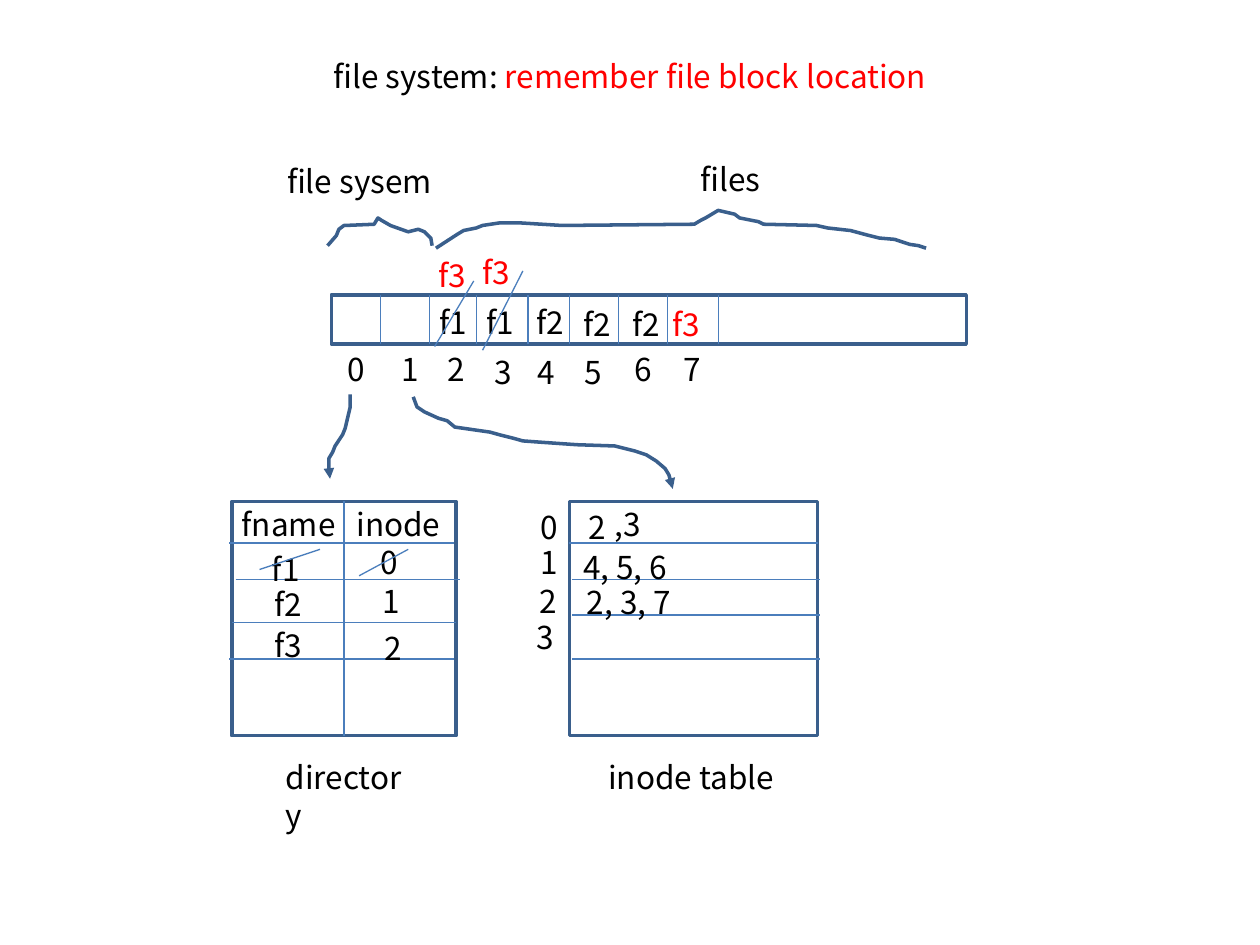
from pptx import Presentation
from pptx.dml.color import RGBColor
from pptx.enum.shapes import MSO_CONNECTOR, MSO_SHAPE
from pptx.enum.text import MSO_ANCHOR, MSO_AUTO_SIZE, PP_ALIGN
from pptx.oxml.ns import qn
from pptx.util import Inches, Pt
from lxml import etree

RECT = MSO_SHAPE.RECTANGLE
LINE = MSO_CONNECTOR.STRAIGHT
MIDDLE = MSO_ANCHOR.MIDDLE
GROW = MSO_AUTO_SIZE.SHAPE_TO_FIT_TEXT
FIXED = MSO_AUTO_SIZE.NONE
CENTER = PP_ALIGN.CENTER
FONT = "Noto Sans CJK KR"
COLORS = {"text": "000000", "red": "FF0000", "edge": "3A5F8C", "rule": "4B7EBC"}
DIGIT, NAME = 0.31, 0.47

BRACE_FS = [(0, 0.22), (0.07, 0.14), (0.09, 0.09), (0.13, 0.06), (0.37, 0.05),
            (0.4, 0), (0.43, 0.02), (0.5, 0.06), (0.64, 0.11), (0.72, 0.09),
            (0.77, 0.11), (0.82, 0.16), (0.83, 0.22)]
BRACE_FILES = [(0, 0.3), (0.17, 0.19), (0.22, 0.16), (0.32, 0.14), (0.37, 0.12),
               (0.5, 0.1), (0.68, 0.1), (1, 0.12), (2.05, 0.11), (2.1, 0.08),
               (2.14, 0.06), (2.24, 0), (2.37, 0.03), (2.41, 0.06), (2.56, 0.09),
               (2.6, 0.11), (3.02, 0.12), (3.11, 0.14), (3.29, 0.16), (3.44, 0.2),
               (3.52, 0.22), (3.64, 0.23), (3.76, 0.27), (3.83, 0.28), (3.89, 0.3)]
TO_DIR = [(0.17, 0), (0.17, 0.1), (0.13, 0.27), (0.11, 0.32), (0.05, 0.41),
          (0.03, 0.46), (0, 0.51), (0, 0.58), (0.01, 0.67)]
TO_TABLE = [(0, 0), (0.03, 0.08), (0.09, 0.12), (0.2, 0.17), (0.27, 0.19),
            (0.33, 0.24), (0.61, 0.28), (0.68, 0.3), (0.8, 0.33), (0.87, 0.35),
            (1.01, 0.36), (1.3, 0.38), (1.6, 0.39), (1.76, 0.43), (1.85, 0.46),
            (1.93, 0.51), (2, 0.57), (2.03, 0.62), (2.06, 0.73)]


def tint(name):
    return RGBColor.from_string(COLORS[name])


def text(slide, x, y, w, *runs, h=0.4):
    box = slide.shapes.add_textbox(Inches(x), Inches(y), Inches(w), Inches(h))
    frame = box.text_frame
    frame.word_wrap = True
    frame.auto_size = GROW
    for words, color in runs:
        run = frame.paragraphs[0].add_run()
        run.text = words
        run.font.size = Pt(18)
        run.font.name = FONT
        run.font.color.rgb = tint(color)
        fonts = run.font._element
        for tag in ("a:ea", "a:cs"):
            etree.SubElement(fonts, qn(tag)).set("typeface", FONT)
    return box


def labels(slide, left, top, items, color="text"):
    for words, x, y, w in items:
        text(slide, left + x, top + y, w, (words, color))


def rule(slide, x1, y1, x2, y2):
    line = slide.shapes.add_connector(LINE, Inches(x1), Inches(y1), Inches(x2), Inches(y2))
    line.line.color.rgb = tint("rule")
    line.line.width = Pt(0.75)
    etree.SubElement(line._element.spPr, qn("a:effectLst"))


def outline(shape):
    shape.shadow.inherit = False
    shape.fill.background()
    shape.line.color.rgb = tint("edge")
    shape.line.width = Pt(2)


def frame(slide, box):
    outline(slide.shapes.add_shape(RECT, *map(Inches, box)))


def curve(slide, left, top, points, arrow=False):
    spots = [(Inches(left + x), Inches(top + y)) for x, y in points]
    pen = slide.shapes.build_freeform(*spots[0])
    pen.add_line_segments(spots[1:], close=False)
    shape = pen.convert_to_shape()
    outline(shape)
    edge = shape._element.spPr.find(qn("a:ln"))
    etree.SubElement(edge, qn("a:round"))
    if arrow:
        etree.SubElement(edge, qn("a:tailEnd")).set("type", "triangle")


def title(slide, box):
    left, top, width, height = box
    head = text(slide, left, top, width, ("file system: ", "text"),
                ("remember file block location", "red"), h=height)
    head.text_frame.auto_size = FIXED
    head.text_frame.vertical_anchor = MIDDLE
    head.text_frame.paragraphs[0].alignment = CENTER


def disk(slide, box):
    left, top, width, height = box
    frame(slide, box)
    for x in (0.39, 0.78, 1.15, 1.56, 1.89, 2.28, 2.67, 3.07):
        rule(slide, left + x, top, left + x, top + height)
    spots = [(0.03, 0.39), (0.46, 0.39), (0.82, 0.39), (1.2, 0.41),
             (1.54, 0.41), (1.91, 0.41), (2.31, 0.39), (2.7, 0.39)]
    labels(slide, left, top, [(str(i), x, y, DIGIT) for i, (x, y) in enumerate(spots)])
    labels(slide, left, top, [
        ("f1", 0.76, 0.02, NAME), ("f1", 1.13, 0.02, NAME), ("f2", 1.53, 0.02, NAME),
        ("f2", 1.9, 0.03, NAME), ("f2", 2.29, 0.03, NAME),
        ("file sysem", -0.45, -1.1, 1.56), ("files", 2.83, -1.12, 1.56)])
    labels(slide, left, top, [
        ("f3", 0.75, -0.36, NAME), ("f3", 1.1, -0.38, NAME), ("f3", 2.61, 0.03, NAME)], "red")
    rule(slide, left + 1.13, top - 0.11, left + 0.82, top + 0.41)
    rule(slide, left + 1.52, top - 0.19, left + 1.2, top + 0.44)
    curve(slide, left - 0.03, top - 0.61, BRACE_FS)
    curve(slide, left + 0.83, top - 0.67, BRACE_FILES)


def grid(slide, box, rows):
    left, top, width, height = box
    frame(slide, box)
    for x, y in rows:
        rule(slide, left + x, top + y, left + x + width, top + y)


def folder(slide, box):
    left, top, width, height = box
    grid(slide, box, [(-0.02, 0.33), (0.03, 0.62), (0, 0.96), (-0.02, 1.25)])
    rule(slide, left + 0.89, top, left + 0.89, top + height)
    labels(slide, left, top, [
        ("fname", -0.02, -0.02, 1.02), ("inode", 0.89, -0.02, 1.02),
        ("f1", 0.22, 0.34, NAME), ("0", 1.08, 0.28, DIGIT),
        ("f2", 0.24, 0.61, NAME), ("1", 1.1, 0.59, DIGIT),
        ("f3", 0.24, 0.94, NAME), ("2", 1.11, 0.96, DIGIT),
        ("directory", 0.33, 1.99, 1.23)])
    rule(slide, left + 0.7, top + 0.38, left + 0.22, top + 0.54)
    rule(slide, left + 1.4, top + 0.38, left + 1.01, top + 0.59)
    curve(slide, left + 0.77, top - 0.85, TO_DIR, True)


def inodes(slide, box):
    left, top, width, height = box
    grid(slide, box, [(0, 0.33), (0.02, 0.62), (0.02, 0.9), (0.02, 1.25)])
    labels(slide, left, top, [
        ("0", -0.33, 0, DIGIT), ("1", -0.33, 0.28, DIGIT),
        ("2", -0.34, 0.59, DIGIT), ("3", -0.36, 0.88, DIGIT),
        ("2", 0.05, 0, DIGIT), (",3", 0.26, -0.02, NAME),
        ("4, 5, 6", 0.01, 0.32, 1.46), ("2, 3, 7", 0.04, 0.6, 1.34),
        ("inode table", 0.21, 1.99, 1.94)])
    curve(slide, left - 1.24, top - 0.83, TO_TABLE, True)


def main():
    deck = Presentation()
    deck.slide_width, deck.slide_height = Inches(10), Inches(7.5)
    slide = deck.slides.add_slide(deck.slide_layouts[6])
    title(slide, (0.5, 0.3, 9, 0.61))
    disk(slide, (2.63, 2.34, 5.04, 0.39))
    folder(slide, (1.84, 3.98, 1.78, 1.86))
    inodes(slide, (4.52, 3.98, 1.97, 1.86))
    deck.save("out.pptx")


if __name__ == "__main__":
    main()
